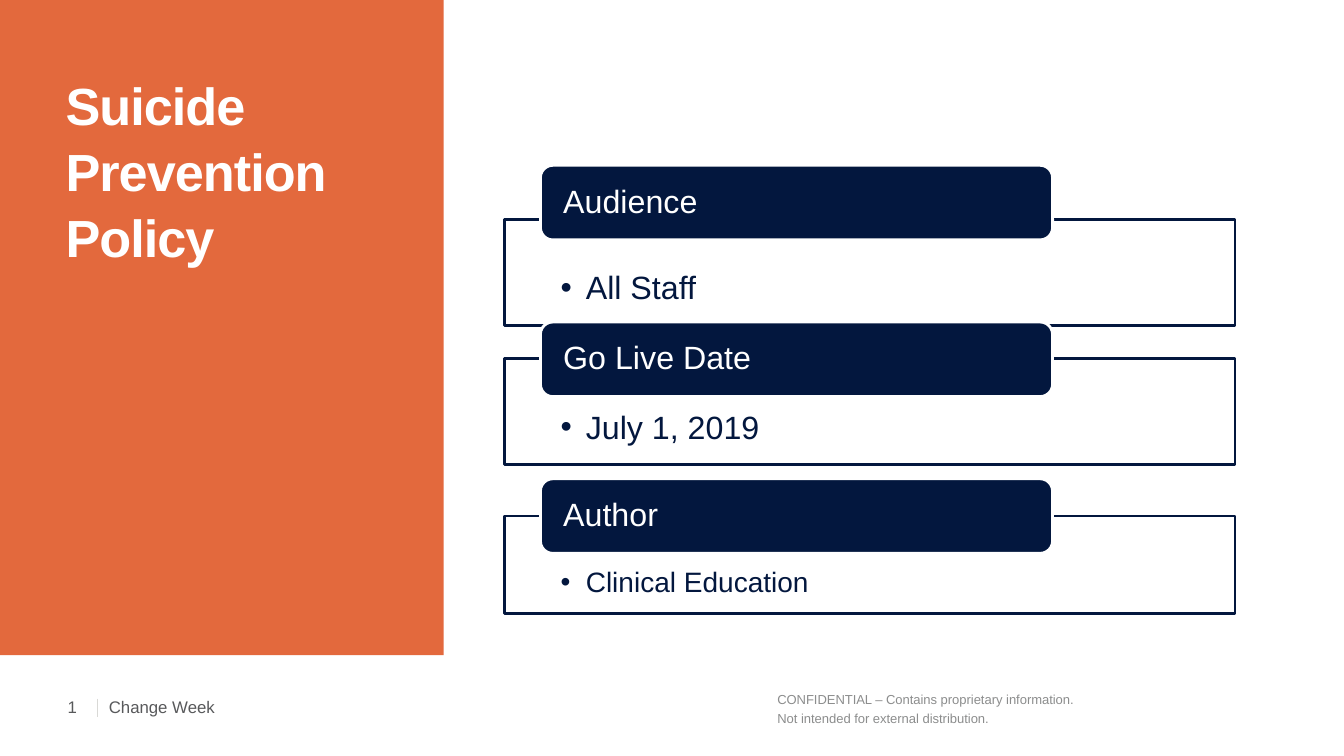
from dataclasses import dataclass

from lxml.etree import SubElement
from pptx import Presentation
from pptx.dml.color import RGBColor
from pptx.enum.shapes import MSO_CONNECTOR as Connector, MSO_SHAPE as Preset
from pptx.enum.text import MSO_ANCHOR as Anchor, PP_ALIGN as Align
from pptx.oxml.ns import qn
from pptx.util import Inches, Pt

COLORS = {
    "orange": "E05929",
    "navy": "03173E",
    "white": "FFFFFF",
    "rule": "D9D9D6",
    "footer": "58595B",
    "notice": "8C8D8D",
}
FONT = "Arial"
PANEL_LEFT, PANEL_WIDTH = 5, 7.25
HEADER_LEFT, HEADER_WIDTH, HEADER_HEIGHT = 5.36, 5.08, 0.74
FIRST_HEADER_TOP, HEADER_STEP = 1.64, 1.555


@dataclass
class Section:
    heading: str
    detail: str
    top: float
    height: float = 1.05
    detail_size: float = 23


@dataclass
class Label:
    text: str
    left: float
    top: float
    width: float
    height: float
    size: float
    color: str
    bold: bool = False
    anchor: Anchor = Anchor.TOP
    line_spacing: float = 1.0
    tracking: int = 0


SECTIONS = [
    Section("Audience", "All Staff", 2.18),
    Section("Go Live Date", "July 1, 2019", 3.56),
    Section("Author", "Clinical Education", 5.12, 0.97, 20),
]
LABELS = [
    Label("CONFIDENTIAL – Contains proprietary information.\nNot intended for external distribution.",
          7.71, 6.83, 3.42, 0.36, 9.3, "notice", line_spacing=1.2),
    Label("1", 0.67, 6.88, 0.36, 0.27, 12, "footer", anchor=Anchor.MIDDLE),
    Label("Suicide Prevention Policy", 0.65, 0.7, 3.42, 5.7, 37.3, "white",
          bold=True, line_spacing=1.05, tracking=-70),
    Label("Change Week", 1.08, 6.88, 4.94, 0.27, 12, "footer", anchor=Anchor.MIDDLE),
]


def rgb(name: str) -> RGBColor:
    return RGBColor.from_string(COLORS[name])


def set_text(shape, text: str, size: float, color: str, insets: tuple,
             anchor: Anchor, line_spacing: float, bold: bool = False) -> None:
    frame = shape.text_frame
    frame.text = text
    frame.word_wrap = True
    frame.vertical_anchor = anchor
    (frame.margin_left, frame.margin_top,
     frame.margin_right, frame.margin_bottom) = map(Inches, insets)
    for para in frame.paragraphs:
        para.alignment = Align.LEFT
        para.line_spacing = line_spacing
        for span in para.runs:
            span.font.name = FONT
            span.font.size = Pt(size)
            span.font.bold = bold
            span.font.color.rgb = rgb(color)


def add_block(page, preset: Preset, bounds: tuple, fill: str,
              line: str = "", alpha: int = 100):
    box = page.shapes.add_shape(preset, *map(Inches, bounds))
    box.shadow.inherit = False
    box.fill.solid()
    box.fill.fore_color.rgb = rgb(fill)
    if alpha < 100:
        color = box.fill._xPr.find(qn("a:solidFill"))[0]
        SubElement(color, qn("a:alpha"), val=str(alpha * 1000))
    if line:
        box.line.color.rgb = rgb(line)
        box.line.width = Pt(2)
    else:
        box.line.fill.background()
    return box


def add_bullet(para) -> None:
    properties = para._p.get_or_add_pPr()
    properties.set("marL", str(Inches(0.25)))
    properties.set("indent", str(-Inches(0.25)))
    SubElement(properties, qn("a:buFont"), typeface=FONT)
    SubElement(properties, qn("a:buChar"), char="•")


def add_section(page, section: Section, header_top: float) -> None:
    panel = add_block(page, Preset.RECTANGLE,
                      (PANEL_LEFT, section.top, PANEL_WIDTH, section.height),
                      "white", "navy", 90)
    set_text(panel, section.detail, section.detail_size, "navy",
             (0.56, 0.52, 0.56, 0.16), Anchor.TOP, 0.9)
    add_bullet(panel.text_frame.paragraphs[0])
    header = add_block(page, Preset.ROUNDED_RECTANGLE,
                       (HEADER_LEFT, header_top, HEADER_WIDTH, HEADER_HEIGHT),
                       "navy", "white")
    set_text(header, section.heading, 23, "white", (0.19, 0, 0.19, 0), Anchor.MIDDLE, 0.9)


def add_label(page, label: Label) -> None:
    box = page.shapes.add_textbox(Inches(label.left), Inches(label.top),
                                  Inches(label.width), Inches(label.height))
    set_text(box, label.text, label.size, label.color, (0, 0, 0, 0),
             label.anchor, label.line_spacing, label.bold)
    if label.tracking:
        for span in box.text_frame.paragraphs[0].runs:
            span._r.get_or_add_rPr().set("spc", str(label.tracking))


def add_footer_rule(page) -> None:
    rule = page.shapes.add_connector(Connector.STRAIGHT, Inches(0.97), Inches(6.93),
                                     Inches(0.97), Inches(7.11))
    rule.line.color.rgb = rgb("rule")
    rule.line.width = Pt(0.75)
    SubElement(rule._element.spPr, qn("a:effectLst"))


def main() -> None:
    deck = Presentation()
    deck.slide_width, deck.slide_height = Inches(13.33), Inches(7.5)
    page = deck.slides.add_slide(deck.slide_layouts[6])
    add_block(page, Preset.RECTANGLE, (0, 0, 4.4, 6.5), "orange", alpha=90)
    add_footer_rule(page)
    for index, section in enumerate(SECTIONS):
        add_section(page, section, FIRST_HEADER_TOP + index * HEADER_STEP)
    for label in LABELS:
        add_label(page, label)
    deck.save("out.pptx")


if __name__ == "__main__":
    main()
